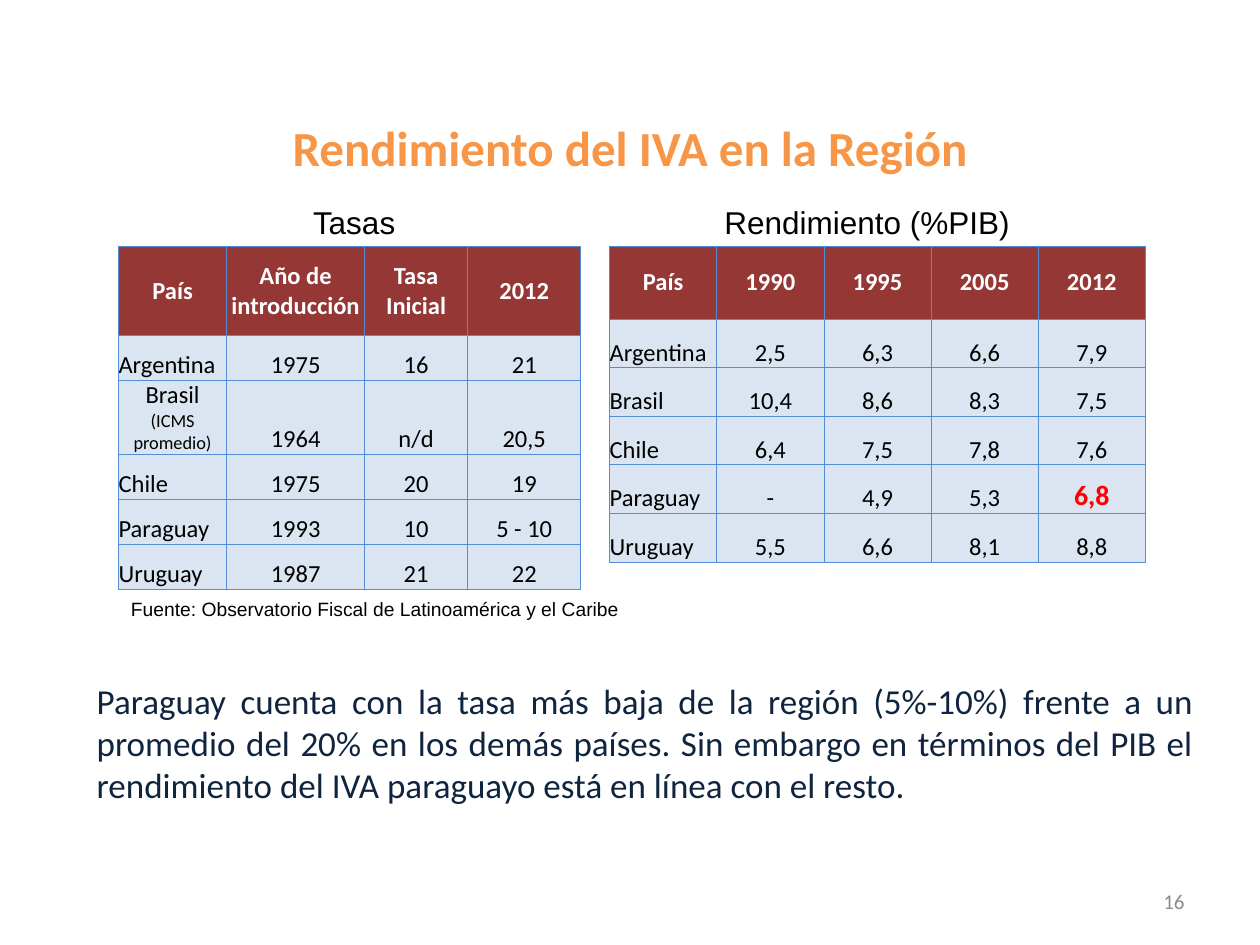
from pptx import Presentation
from pptx.dml.color import RGBColor
from pptx.enum.text import MSO_ANCHOR, PP_ALIGN
from pptx.oxml import parse_xml
from pptx.oxml.ns import nsdecls
from pptx.util import Cm, Pt

LEFT, CENTER, RIGHT, JUSTIFY = PP_ALIGN.LEFT, PP_ALIGN.CENTER, PP_ALIGN.RIGHT, PP_ALIGN.JUSTIFY
TOP, MIDDLE, BOTTOM = MSO_ANCHOR.TOP, MSO_ANCHOR.MIDDLE, MSO_ANCHOR.BOTTOM

COLORS = {
    "title": "F79646", "header": "953735", "body": "DBE5F1", "border": "538ED5",
    "white": "FFFFFF", "black": "000000", "alert": "FF0000",
    "message": "0F243E", "number": "8C8C8C",
}

RATES = [
    ["País", "Año de introducción", "Tasa Inicial", "2012"],
    ["Argentina", "1975", "16", "21"],
    ["Brasil", "1964", "n/d", "20,5"],
    ["Chile", "1975", "20", "19"],
    ["Paraguay", "1993", "10", "5 - 10"],
    ["Uruguay", "1987", "21", "22"],
]
YIELDS = [
    ["País", "1990", "1995", "2005", "2012"],
    ["Argentina", "2,5", "6,3", "6,6", "7,9"],
    ["Brasil", "10,4", "8,6", "8,3", "7,5"],
    ["Chile", "6,4", "7,5", "7,8", "7,6"],
    ["Paraguay", "-", "4,9", "5,3", "6,8"],
    ["Uruguay", "5,5", "6,6", "8,1", "8,8"],
]
MESSAGE = (
    "Paraguay cuenta con la tasa más baja de la región (5%-10%) frente a un promedio "
    "del 20% en los demás países. Sin embargo en términos del PIB el rendimiento del "
    "IVA paraguayo está en línea con el resto."
)


def write_span(para, text, size=14, color="black", font="Calibri", bold=False, align=None):
    """Add a formatted span of text to a paragraph."""
    span = para.add_run()
    span.text = text
    span.font.size = Pt(size)
    span.font.name = font
    span.font.bold = bold
    span.font.color.rgb = RGBColor.from_string(COLORS[color])
    if align is not None:
        para.alignment = align


class PageBuilder:
    """Holds the style and the current slide."""

    def __init__(self, deck):
        self.page = deck.slides.add_slide(deck.slide_layouts[5])

    def place(self, box, left, top, width, height):
        """Move and size a box."""
        box.left, box.top, box.width, box.height = Cm(left), Cm(top), Cm(width), Cm(height)

    def title(self, text, *place, **style):
        """Fill and format the title placeholder."""
        box = self.page.shapes.title
        self.place(box, *place)
        box.text_frame.vertical_anchor = MIDDLE
        write_span(box.text_frame.paragraphs[0], text, **style)

    def text(self, text, *place, anchor=TOP, **style):
        """Add a wrapped text box."""
        box = self.page.shapes.add_textbox(*(Cm(length) for length in place))
        box.text_frame.word_wrap = True
        box.text_frame.vertical_anchor = anchor
        write_span(box.text_frame.paragraphs[0], text, **style)

    def border(self, cell):
        """Draw a thin line on all four sides of a cell."""
        properties = cell._tc.get_or_add_tcPr()
        for side in ("lnL", "lnR", "lnT", "lnB"):
            properties.append(parse_xml(
                f'<a:{side} {nsdecls("a")} w="6350"><a:solidFill>'
                f'<a:srgbClr val="{COLORS["border"]}"/></a:solidFill></a:{side}>'))

    def cell(self, cell, text, is_header, **style):
        """Fill and format one table cell."""
        self.border(cell)
        cell.fill.solid()
        cell.fill.fore_color.rgb = RGBColor.from_string(COLORS["header" if is_header else "body"])
        cell.margin_left = cell.margin_right = cell.margin_top = cell.margin_bottom = 0
        cell.vertical_anchor = MIDDLE if is_header else BOTTOM
        write_span(cell.text_frame.paragraphs[0], text, **style)

    def table(self, rows, left, top, widths, heights, special=None):
        """Add a table whose special cells override the usual style."""
        special = special or {}
        frame = self.page.shapes.add_table(
            len(rows), len(widths), Cm(left), Cm(top), Cm(sum(widths)), Cm(sum(heights)))
        table = frame.table
        for column, width in zip(table.columns, widths):
            column.width = Cm(width)
        for i, (row, height) in enumerate(zip(rows, heights)):
            table.rows[i].height = Cm(height)
            for j, text in enumerate(row):
                is_header = i == 0
                style = {"color": "white" if is_header else "black", "bold": is_header,
                         "align": CENTER if is_header or j else LEFT}
                style.update(special.get((i, j), {}))
                self.cell(table.cell(i, j), text, is_header, **style)
        return table


def main():
    """Build the slide on VAT rates and yields."""
    deck = Presentation()
    deck.slide_width, deck.slide_height = Cm(25.4), Cm(19.05)
    builder = PageBuilder(deck)

    builder.title("Rendimiento del IVA en la Región", 0, 1.98, 25.4, 1.96,
                  size=28, color="title", bold=True, align=CENTER)
    for heading, left in (("Tasas", 3.76), ("Rendimiento (%PIB)", 14.1)):
        builder.text(heading, left, 3.96, 6.76, 1.02, size=18, font="Arial", align=CENTER)

    rates = builder.table(RATES, 2.39, 4.96, [2.18, 2.78, 2.08, 2.28],
                          [1.8, 0.91, 1.48, 0.91, 0.91, 0.91], {(2, 0): {"align": CENTER}})
    brazil = rates.cell(2, 0).text_frame.paragraphs[0]
    brazil.add_line_break()
    write_span(brazil, "(ICMS promedio)", size=10.5)

    builder.table(YIELDS, 12.29, 4.96, [2.16] * 5, [1.47] + [0.98] * 5,
                  {(4, 4): {"size": 16, "color": "alert", "bold": True}})

    builder.text("Fuente: Observatorio Fiscal de Latinoamérica y el Caribe",
                 2.39, 11.91, 15.67, 0.74, size=11, font="Arial")
    builder.text(MESSAGE, 1.7, 13.58, 22.61, 2.82, size=20, color="message", align=JUSTIFY)
    builder.text("16", 18.21, 17.65, 5.92, 1.02, anchor=MIDDLE,
                 size=12, color="number", align=RIGHT)
    deck.save("out.pptx")


if __name__ == "__main__":
    main()
